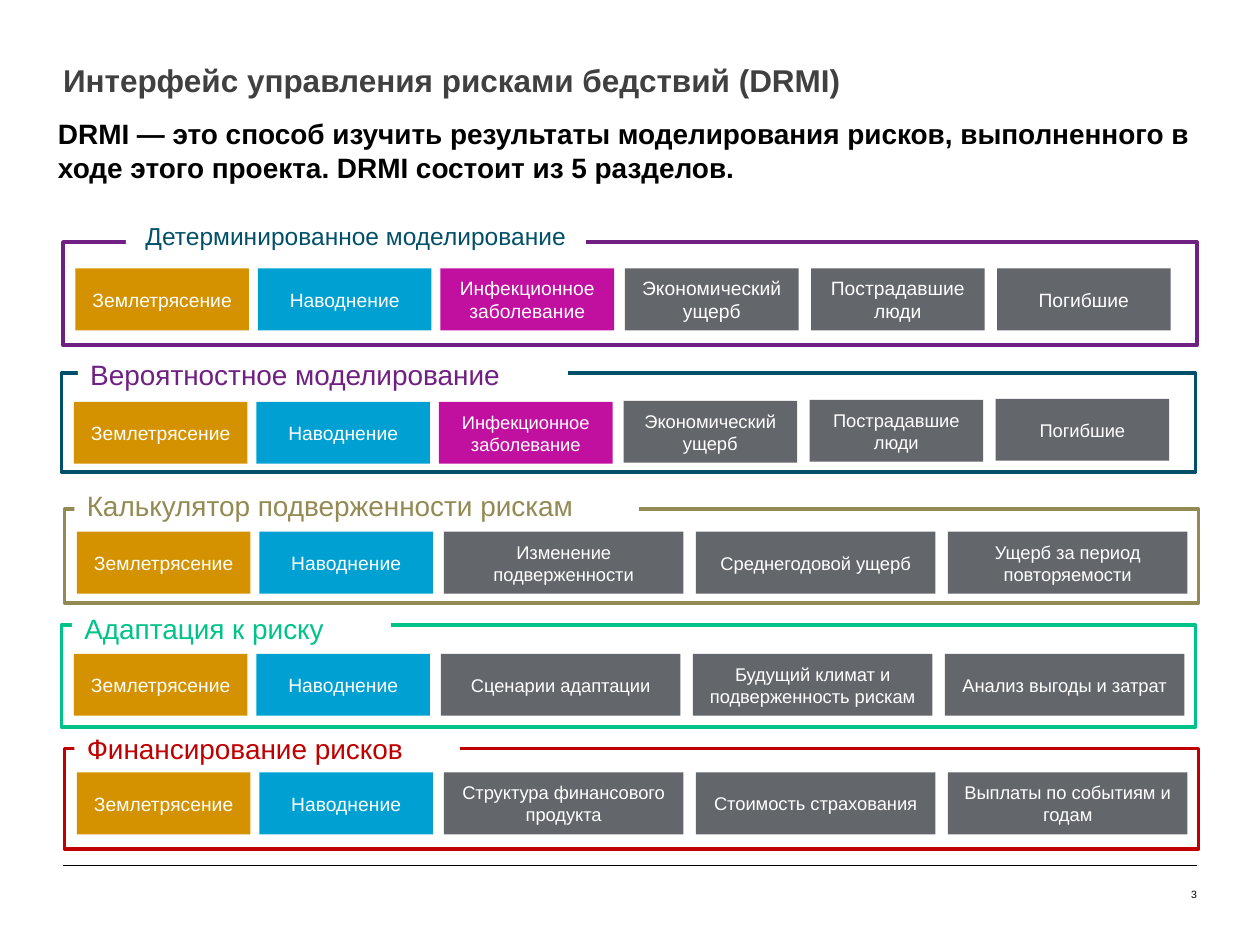
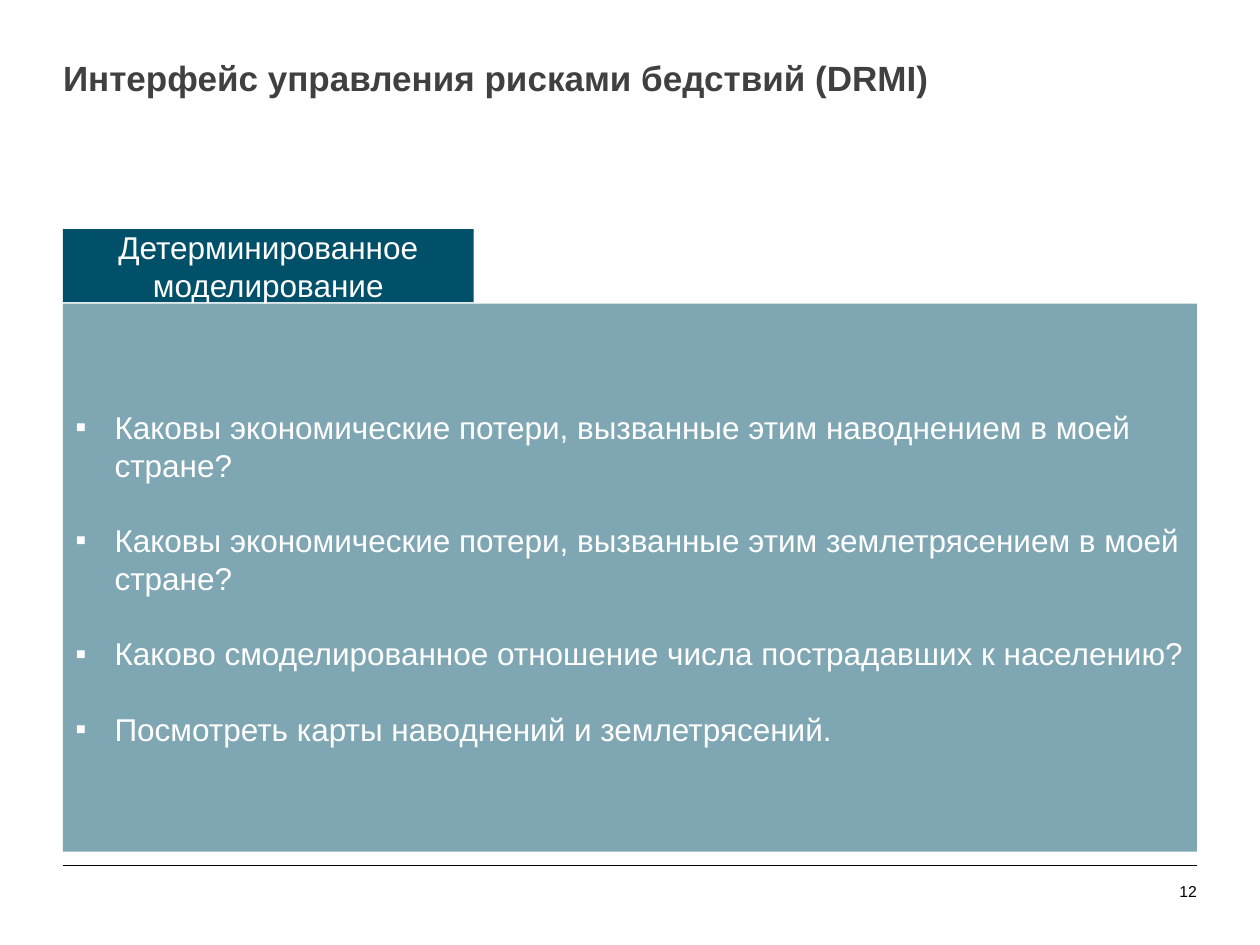
from collections import namedtuple
from dataclasses import dataclass

from lxml.etree import SubElement
from pptx import Presentation
from pptx.dml.color import RGBColor
from pptx.enum.shapes import MSO_CONNECTOR, MSO_SHAPE
from pptx.enum.text import MSO_ANCHOR as Anchor, MSO_AUTO_SIZE as AutoSize, PP_ALIGN as Align
from pptx.oxml.ns import qn
from pptx.util import Cm, Pt

Box = namedtuple("Box", "left top width height")
Label = namedtuple("Label", "dx dy width height size align")
Section = namedtuple("Section", "title title_color frame_color frame label cells_dy hazards outcomes outcome_size rise")


@dataclass(frozen=True)
class Theme:
    font: str = "Arial"
    white: str = "FFFFFF"
    black: str = "000000"
    title: str = "404040"
    teal: str = "005069"
    purple: str = "702082"
    khaki: str = "948A54"
    green: str = "00C389"
    red: str = "C00000"
    amber: str = "D49200"
    blue: str = "00A0D2"
    magenta: str = "C110A0"
    grey: str = "63666A"
    intro_size: float = 16
    heading_size: float = 16
    small_heading_size: float = 14
    cell_size: float = 11
    small_cell_size: float = 10.5
    question_size: float = 18


THEME = Theme()
TITLE = "Интерфейс управления рисками бедствий (DRMI)"
INTRO = ("DRMI — это способ изучить результаты моделирования рисков, "
         "выполненного в ходе этого проекта. DRMI состоит из 5 разделов.")
DETERMINISTIC = "Детерминированное моделирование"
QUESTIONS = [
    "Каковы экономические потери, вызванные этим наводнением в моей стране?",
    "Каковы экономические потери, вызванные этим землетрясением в моей стране?",
    "Каково смоделированное отношение числа пострадавших к населению?",
    "Посмотреть карты наводнений и землетрясений.",
]

MARGIN, CONTENT_WIDTH = 1.27, 22.86
CELL_HEIGHT, HAZARD_WIDTH, HAZARD_PITCH = 1.25, 3.5, 3.68
OUTCOME_GRIDS = {2: (7.65, 5.08, 4.83), 3: (11.33, 3.75, 3.5)}

MAIN_HAZARDS = [("Землетрясение", THEME.amber), ("Наводнение", THEME.blue)]
ALL_HAZARDS = MAIN_HAZARDS + [("Инфекционное заболевание", THEME.magenta)]
LOSSES = ["Экономический ущерб", "Пострадавшие люди", "Погибшие"]

SECTIONS = [
    Section(DETERMINISTIC, THEME.teal, THEME.purple,
            Box(1.27, 4.88, CONTENT_WIDTH, 2.08),
            Label(1.27, -0.59, 9.27, 0.91, THEME.small_heading_size, Align.CENTER),
            0.53, ALL_HAZARDS, LOSSES, THEME.cell_size, 0),
    Section("Вероятностное моделирование", THEME.purple, THEME.teal,
            Box(1.24, 7.52, CONTENT_WIDTH, 2.0),
            Label(0.33, -0.33, 9.88, 0.71, THEME.heading_size, Align.LEFT),
            0.58, ALL_HAZARDS, LOSSES, THEME.small_cell_size, 0.02),
    Section("Калькулятор подверженности рискам", THEME.khaki, THEME.khaki,
            Box(1.3, 10.26, CONTENT_WIDTH, 1.9),
            Label(0.2, -0.53, 11.38, 0.91, THEME.heading_size, Align.LEFT),
            0.46, MAIN_HAZARDS,
            ["Изменение подверженности", "Среднегодовой ущерб", "Ущерб за период повторяемости"],
            THEME.small_cell_size, 0),
    Section("Адаптация к риску", THEME.green, THEME.green,
            Box(1.24, 12.6, CONTENT_WIDTH, 2.06),
            Label(0.21, -0.36, 6.43, 0.84, THEME.heading_size, Align.LEFT),
            0.58, MAIN_HAZARDS,
            ["Сценарии адаптации", "Будущий климат и подверженность рискам", "Анализ выгоды и затрат"],
            THEME.small_cell_size, 0),
    Section("Финансирование рисков", THEME.red, THEME.red,
            Box(1.3, 15.09, CONTENT_WIDTH, 2.03),
            Label(0.2, -0.43, 7.77, 0.84, THEME.heading_size, Align.LEFT),
            0.48, MAIN_HAZARDS,
            ["Структура финансового продукта", "Стоимость страхования", "Выплаты по событиям и годам"],
            THEME.small_cell_size, 0),
]


def rgb(color):
    return RGBColor.from_string(color)


def lengths(box):
    return [Cm(value) for value in box]


def write(paragraph, text, size, color, align=Align.LEFT, bold=False):
    paragraph.alignment = align
    run = paragraph.add_run()
    run.text = text
    font = run.font
    font.name, font.size, font.bold = THEME.font, Pt(size), bold
    font.color.rgb = rgb(color)


def clear_margins(frame, anchor=Anchor.TOP):
    frame.margin_left = frame.margin_top = frame.margin_right = frame.margin_bottom = 0
    frame.word_wrap = True
    frame.auto_size = AutoSize.NONE
    frame.vertical_anchor = anchor
    return frame.paragraphs[0]


def add_plain_text(slide, box, text, size, anchor=Anchor.TOP, **style):
    frame = slide.shapes.add_textbox(*lengths(box)).text_frame
    write(clear_margins(frame, anchor), text, size, THEME.black, **style)


def add_block(slide, box, fill=None, outline=None):
    block = slide.shapes.add_shape(MSO_SHAPE.RECTANGLE, *lengths(box))
    block.shadow.inherit = False
    if fill:
        block.fill.solid()
        block.fill.fore_color.rgb = rgb(fill)
    else:
        block.fill.background()
    if outline:
        block.line.color.rgb = rgb(outline)
        block.line.width = Pt(2)
    else:
        block.line.fill.background()
    block.text_frame.word_wrap = True
    block.text_frame.vertical_anchor = Anchor.MIDDLE
    return block


def add_text_block(slide, box, fill, text, size, color=THEME.white, align=Align.CENTER):
    block = add_block(slide, box, fill)
    write(block.text_frame.paragraphs[0], text, size, color, align)


def add_page(deck, title_top, title_size, number, number_size):
    slide = deck.slides.add_slide(deck.slide_layouts[5])
    title = slide.shapes.title
    title.left, title.top, title.width, title.height = lengths(
        Box(MARGIN, title_top, CONTENT_WIDTH, 0.86))
    write(clear_margins(title.text_frame), TITLE, title_size, THEME.title, bold=True)

    rule_y = Cm(17.45)
    rule = slide.shapes.add_connector(
        MSO_CONNECTOR.STRAIGHT, Cm(MARGIN), rule_y, Cm(MARGIN + CONTENT_WIDTH), rule_y)
    rule.line.color.rgb = rgb(THEME.black)
    rule.line.width = Pt(0.25)
    SubElement(rule.line._get_or_add_ln().getparent(), qn("a:effectLst"))

    add_plain_text(slide, Box(23.06, 17.78, 1.07, 0.38), number, number_size,
                   Anchor.BOTTOM, align=Align.RIGHT)
    return slide


def add_section(slide, section):
    frame, label = section.frame, section.label
    add_block(slide, frame, outline=section.frame_color)
    add_text_block(slide, Box(frame.left + label.dx, frame.top + label.dy, label.width, label.height),
                   THEME.white, section.title, label.size, section.title_color, label.align)

    cells_top = frame.top + section.cells_dy
    for column, (hazard, color) in enumerate(section.hazards):
        size = THEME.cell_size if column < len(MAIN_HAZARDS) else section.outcome_size
        box = Box(frame.left + 0.25 + column * HAZARD_PITCH, cells_top, HAZARD_WIDTH, CELL_HEIGHT)
        add_text_block(slide, box, color, hazard, size)

    start, pitch, width = OUTCOME_GRIDS[len(section.hazards)]
    for column, outcome in enumerate(section.outcomes):
        box = Box(frame.left + start + column * pitch,
                  cells_top - (column + 1) * section.rise, width, CELL_HEIGHT)
        add_text_block(slide, box, THEME.grey, outcome, section.outcome_size)


def add_question_panel(slide, box):
    panel = add_block(slide, box, THEME.teal)
    tint = panel.fill._xPr.find(".//" + qn("a:srgbClr"))
    SubElement(tint, qn("a:alpha"), val="50000")

    frame = panel.text_frame
    for index, question in enumerate(QUESTIONS):
        paragraph = frame.add_paragraph() if index else frame.paragraphs[0]
        properties = paragraph._p.get_or_add_pPr()
        properties.set("marL", str(Cm(0.79)))
        properties.set("indent", str(-Cm(0.79)))
        SubElement(properties, qn("a:buFont"), typeface=THEME.font)
        SubElement(properties, qn("a:buChar"), char="▪")
        if index:
            paragraph.space_before = Pt(21.5)
        write(paragraph, question, THEME.question_size, THEME.white)


def build_overview(deck):
    slide = add_page(deck, 1.22, 18, "3", 6)
    add_plain_text(slide, Box(1.17, 2.36, CONTENT_WIDTH, 1.52), INTRO, THEME.intro_size, bold=True)
    for section in reversed(SECTIONS):
        add_section(slide, section)


def build_questions(deck):
    slide = add_page(deck, 1.14, 20, "12", 9)
    add_question_panel(slide, Box(MARGIN, 6.12, CONTENT_WIDTH, 11.05))
    add_text_block(slide, Box(MARGIN, 4.62, 8.28, 1.47), THEME.teal,
                   DETERMINISTIC, THEME.question_size)


def main():
    deck = Presentation()
    deck.slide_width, deck.slide_height = Cm(25.4), Cm(19.05)
    build_overview(deck)
    build_questions(deck)
    deck.save("out.pptx")


if __name__ == "__main__":
    main()
